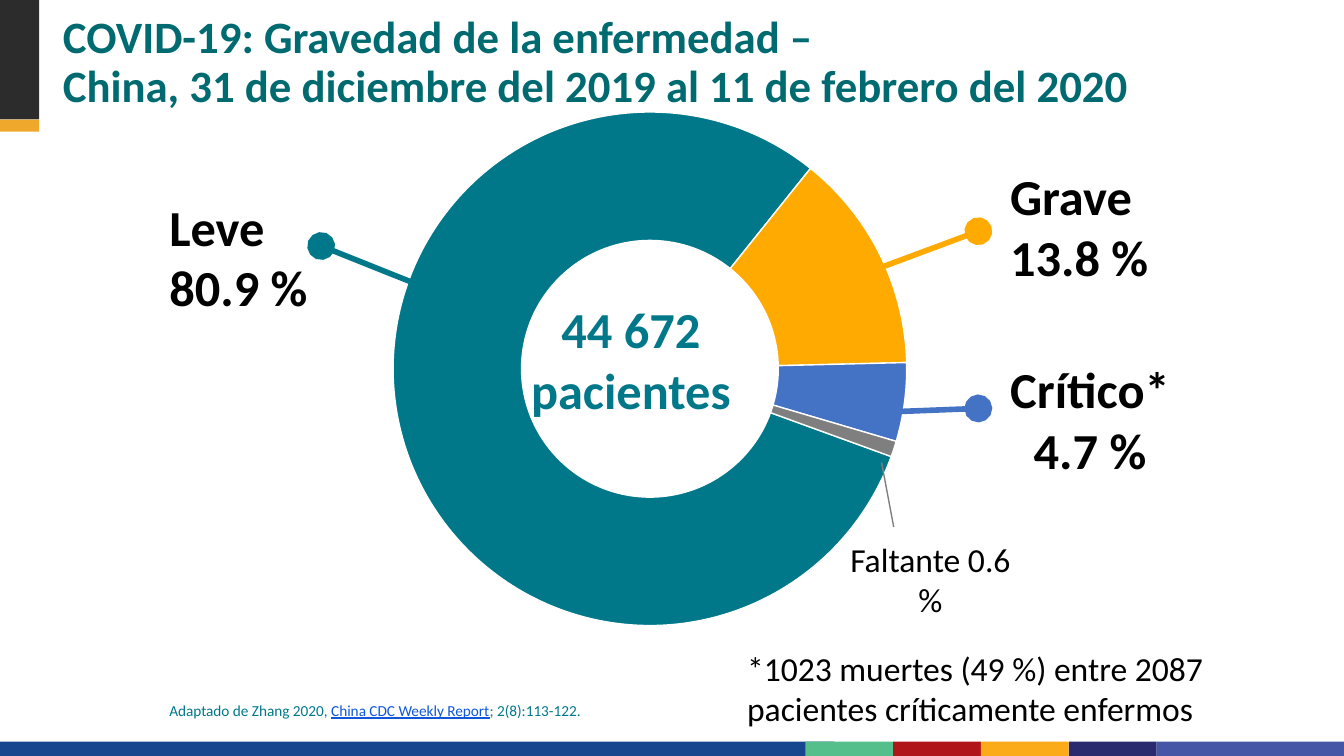
"""Build the slide on COVID-19 disease severity in China."""
from dataclasses import dataclass
from typing import Any, Optional

from lxml import etree
from pptx import Presentation
from pptx import util as u
from pptx.chart import data as chart_data
from pptx.dml import color
from pptx.enum import chart as charts, shapes, text
from pptx.oxml import ns

FONT = "Calibri"
COLOURS = {
    "teal": "00788A", "title": "006A71", "orange": "FFAA00", "blue": "4472C4",
    "grey": "7F7F7F", "black": "000000", "white": "FFFFFF", "link": "0F56DC",
    "charcoal": "2D2C2C", "amber": "F0A82C", "royal": "17468F", "green": "55BF8B",
    "red": "B01519", "yellow": "FBAB18", "navy": "292B6E", "violet": "4656A6",
}
SLICES = {"teal": 81, "orange": 14, "blue": 5, "grey": 1}
FOOTER_TOP, FOOTER_HEIGHT = 14.02, 0.27
FOOTER_START, FOOTER_STEP, SLIDE_WIDTH = 15.22, 1.66, 25.4
FOOTER_COLOURS = ["green", "red", "yellow", "navy", "violet"]


@dataclass
class Band:
    left: float
    top: float
    width: float
    height: float
    colour: str


@dataclass
class Piece:
    content: str
    colour: str = "black"
    underline: bool = False


@dataclass
class Label:
    left: float
    top: float
    width: float
    height: float
    pieces: list[Piece]
    size: float = 27
    bold: bool = True
    align: text.PP_ALIGN = text.PP_ALIGN.CENTER
    inset: float = 0.25
    anchor: text.MSO_ANCHOR = text.MSO_ANCHOR.TOP
    spacing: Optional[float] = None


@dataclass
class Leader:
    start: tuple[float, float]
    end: tuple[float, float]
    colour: str
    width: float = 3
    dots: bool = True


LEFT = text.PP_ALIGN.LEFT
LABELS = [
    Label(0.94, 0.69, 24.1, 1.55,
          [Piece("COVID-19: Gravedad de la enfermedad –\v"
                 "China, 31 de diciembre del 2019 al 11 de febrero del 2020", "title")],
          24, align=LEFT, anchor=text.MSO_ANCHOR.BOTTOM, spacing=0.9),
    Label(2.95, 13.13, 9.02, 0.61,
          [Piece("Adaptado de Zhang 2020, ", "teal"),
           Piece("China CDC Weekly Report", "link", True),
           Piece("; 2(8):113-122.", "teal")], 8.2, False, LEFT),
    Label(13.87, 12.12, 11.15, 1.8,
          [Piece("*1023 muertes (49 %) entre 2087 pacientes críticamente enfermos")],
          18, False, LEFT),
    Label(9.7, 5.51, 4.45, 2.57, [Piece("44 672 pacientes", "teal")]),
    Label(18.29, 6.65, 4.62, 2.57, [Piece("Crítico* 4.7 %")]),
    Label(17.91, 3, 4.9, 2.57, [Piece("Grave 13.8 %")], align=LEFT, inset=1.18),
    Label(2.26, 3.58, 4.45, 2.57, [Piece("Leve 80.9 %")], align=LEFT, inset=0.94),
    Label(15.72, 10.06, 3.73, 1.8, [Piece("Faltante 0.6 %")], 18, False),
]
LEADERS = [
    Leader((6.07, 4.65), (9.3, 5.94), "teal"),
    Leader((18.49, 4.37), (14.81, 5.74), "orange"),
    Leader((18.49, 7.72), (16.43, 7.8), "blue"),
    Leader((16.66, 8.74), (16.89, 9.96), "grey", 0.75, False),
]


def rgb(name: str) -> color.RGBColor:
    """Return the named colour."""
    return color.RGBColor.from_string(COLOURS[name])


def apply(target: Any, values: dict[str, Any]) -> None:
    """Set every attribute in values on target."""
    for name, value in values.items():
        setattr(target, name, value)


def draw_band(slide: Any, band: Band) -> None:
    """Draw a plain coloured rectangle."""
    shape = slide.shapes.add_shape(
        shapes.MSO_SHAPE.RECTANGLE, u.Cm(band.left), u.Cm(band.top),
        u.Cm(band.width), u.Cm(band.height))
    shape.shadow.inherit = False
    shape.fill.solid()
    shape.fill.fore_color.rgb = rgb(band.colour)
    shape.line.fill.background()


def draw_label(slide: Any, label: Label) -> None:
    """Draw a wrapped text box."""
    box = slide.shapes.add_textbox(
        u.Cm(label.left), u.Cm(label.top), u.Cm(label.width), u.Cm(label.height))
    apply(box.text_frame, {"word_wrap": True, "margin_left": u.Cm(label.inset),
                           "vertical_anchor": label.anchor})
    paragraph = box.text_frame.paragraphs[0]
    apply(paragraph, {"alignment": label.align, "line_spacing": label.spacing})
    for piece in label.pieces:
        for index, line in enumerate(piece.content.split("\v")):
            if index:
                paragraph.add_line_break()
            run = paragraph.add_run()
            run.text = line
            apply(run.font, {"name": FONT, "size": u.Pt(label.size),
                             "bold": label.bold, "underline": piece.underline})
            run.font.color.rgb = rgb(piece.colour)


def draw_leader(slide: Any, leader: Leader) -> None:
    """Draw a line from a label to its slice."""
    points = [u.Cm(value) for value in (*leader.start, *leader.end)]
    connector = slide.shapes.add_connector(shapes.MSO_CONNECTOR.STRAIGHT, *points)
    connector.line.color.rgb = rgb(leader.colour)
    connector.line.width = u.Pt(leader.width)
    properties = connector.element.spPr
    if leader.dots:
        line = properties.find(ns.qn("a:ln"))
        for tag in ("a:headEnd", "a:tailEnd"):
            etree.SubElement(line, ns.qn(tag), type="oval", w="lg", len="lg")
    etree.SubElement(properties, ns.qn("a:effectLst"))


def draw_doughnut(slide: Any) -> None:
    """Draw the severity doughnut."""
    values = chart_data.CategoryChartData()
    values.categories = [str(number) for number in range(1, len(SLICES) + 1)]
    values.add_series("Series 1", list(SLICES.values()))
    chart = slide.shapes.add_chart(
        charts.XL_CHART_TYPE.DOUGHNUT, u.Cm(3.33), u.Cm(1.7), u.Cm(17.73),
        u.Cm(10.44), values).chart
    apply(chart, {"has_legend": False, "has_title": False})
    apply(chart.font, {"name": FONT, "size": u.Pt(10)})
    chart.font.color.rgb = rgb("link")
    plot = chart.plots[0]
    plot.vary_by_categories = True
    for index, name in enumerate(SLICES):
        style = plot.series[0].points[index].format
        style.fill.solid()
        style.fill.fore_color.rgb = rgb(name)
        style.line.color.rgb = rgb("white")
        style.line.width = u.Pt(0.75)
    for tag, value in {"c:firstSliceAng": "110", "c:holeSize": "50"}.items():
        next(chart.element.iter(ns.qn(tag))).set("val", value)
    area = next(chart.element.iter(ns.qn("c:plotArea")))
    for old in area.findall(ns.qn("c:layout")):
        area.remove(old)
    layout = etree.Element(ns.qn("c:layout"))
    manual = etree.SubElement(layout, ns.qn("c:manualLayout"))
    settings = {"layoutTarget": "inner", "xMode": "edge", "yMode": "edge",
                "x": "0.23", "y": "0.04", "w": "0.55", "h": "0.93"}
    for tag, value in settings.items():
        etree.SubElement(manual, ns.qn(f"c:{tag}"), val=value)
    area.insert(0, layout)


def main() -> None:
    """Assemble and save the slide."""
    presentation = Presentation()
    apply(presentation, {"slide_width": u.Cm(SLIDE_WIDTH), "slide_height": u.Cm(14.29)})
    slide = presentation.slides.add_slide(presentation.slide_layouts[6])
    bands = [Band(0, 0, 0.74, 2.26, "charcoal"), Band(0, 2.26, 0.74, 0.23, "amber"),
             Band(0, FOOTER_TOP, 15.77, FOOTER_HEIGHT, "royal")]
    for index, name in enumerate(FOOTER_COLOURS):
        left = FOOTER_START + index * FOOTER_STEP
        last = index == len(FOOTER_COLOURS) - 1
        width = SLIDE_WIDTH - left if last else FOOTER_STEP
        bands.append(Band(left, FOOTER_TOP, width, FOOTER_HEIGHT, name))
    for band in bands:
        draw_band(slide, band)
    draw_doughnut(slide)
    for label in LABELS:
        draw_label(slide, label)
    for leader in LEADERS:
        draw_leader(slide, leader)
    presentation.save("out.pptx")


if __name__ == "__main__":
    main()
